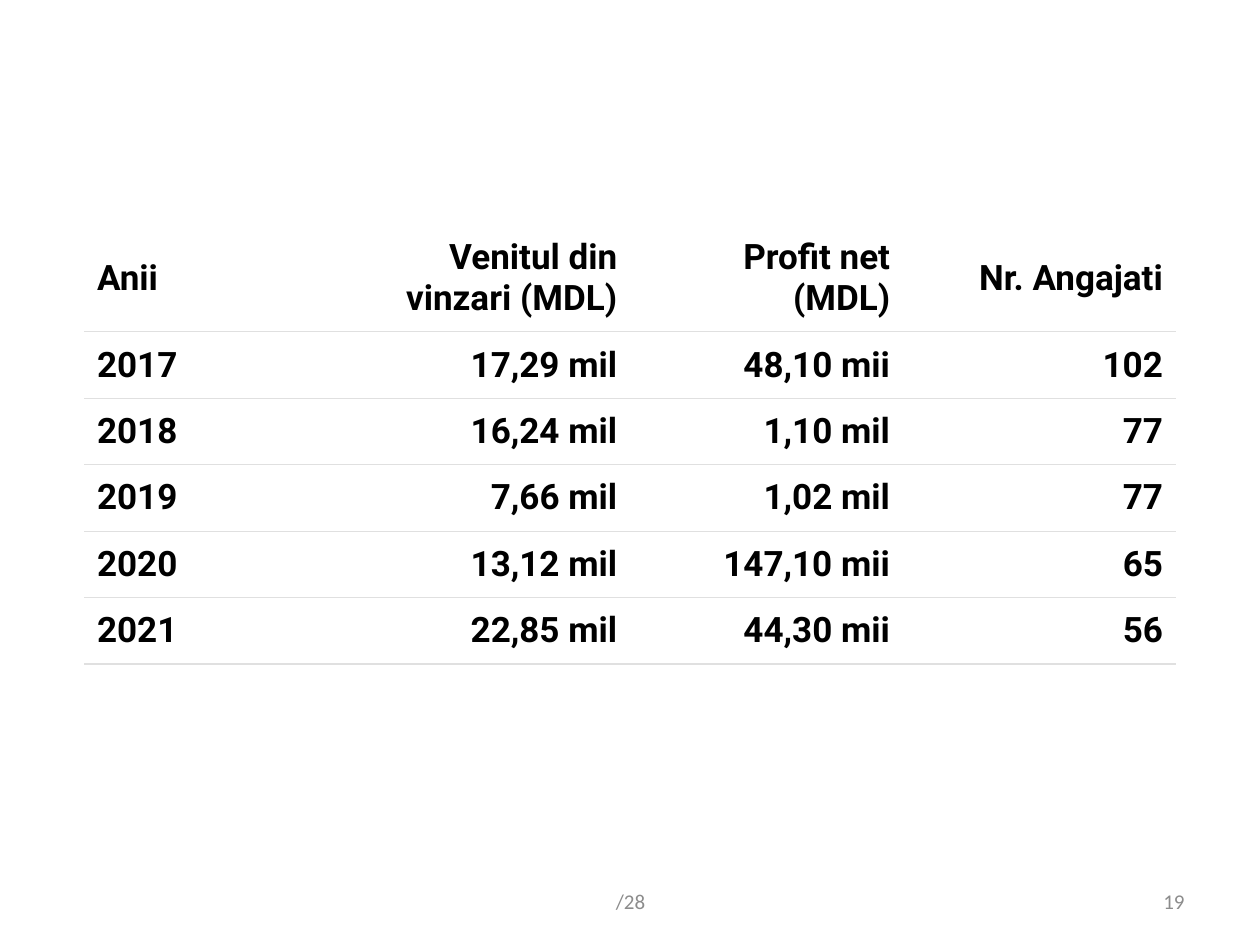
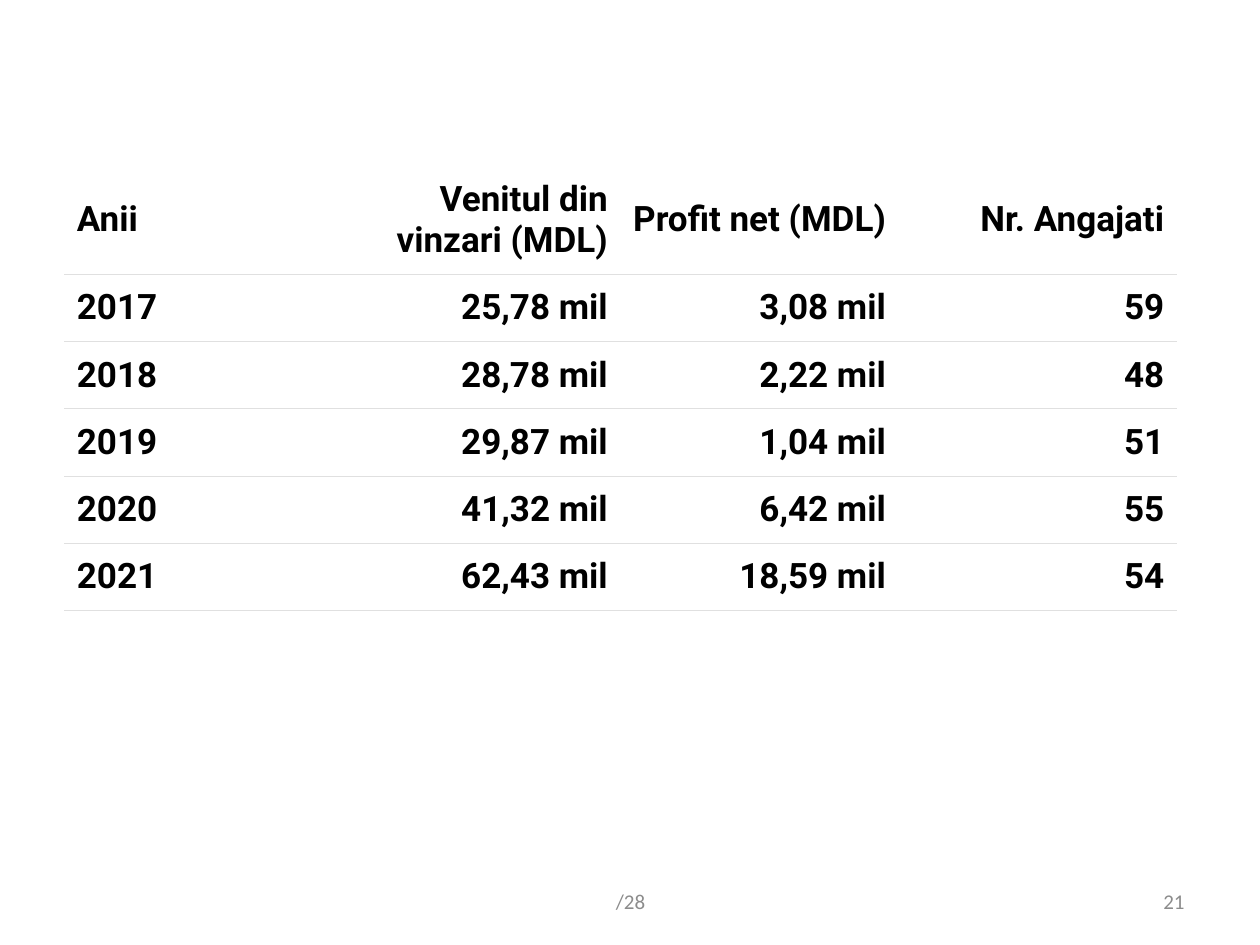
from dataclasses import dataclass

from lxml.etree import fromstring
from pptx import Presentation
from pptx.dml.color import RGBColor as Rgb
from pptx.enum.text import MSO_ANCHOR as Anchor, PP_ALIGN as Align
from pptx.util import Inches, Pt

NS = "http://schemas.openxmlformats.org/drawingml/2006/main"
WIDE, HIGH = 10, 7.5


@dataclass(frozen=True)
class Theme:
    ink: str = "000000"
    paper: str = "FFFFFF"
    rule: str = "E0E0E0"
    mute: str = "8C8C8C"
    body: str = "Roboto"
    foot: str = "Calibri"
    big: int = 20
    small: int = 12
    line: float = 0.75
    pad: float = 0.1


LOOK = Theme()

# Table content
HEAD = ("Anii", "Venitul din vinzari (MDL)", "Profit net (MDL)", "Nr. Angajati")
YEARS = range(2017, 2022)
FIRST = (
    ("17,29 mil", "48,10 mii", "102"),
    ("16,24 mil", "1,10 mil", "77"),
    ("7,66 mil", "1,02 mil", "77"),
    ("13,12 mil", "147,10 mii", "65"),
    ("22,85 mil", "44,30 mii", "56"),
)
NEXT = (
    ("25,78 mil", "3,08 mil", "59"),
    ("28,78 mil", "2,22 mil", "48"),
    ("29,87 mil", "1,04 mil", "51"),
    ("41,32 mil", "6,42 mil", "55"),
    ("62,43 mil", "18,59 mil", "54"),
)
# Page number, table box (left, top, width) and figures
PAGES = (
    (19, (0.67, 1.78, 8.66), FIRST),
    (21, (0.51, 1.31, 8.83), NEXT),
)
HEAD_H, ROW_H = 0.85, 0.52


def write(frame, text, align, font, size, color, bold=False):
    par = frame.paragraphs[0]
    par.alignment = align
    run = par.add_run()
    run.text = text
    run.font.name, run.font.size, run.font.bold = font, Pt(size), bold
    run.font.color.rgb = Rgb.from_string(color)


def edge(cell, side, color=None):
    """Set one cell border; no colour means no line."""
    fill = (f'<a:solidFill><a:srgbClr val="{color}"/></a:solidFill>'
            if color else "<a:noFill/>")
    return fromstring(f'<a:ln{side} xmlns:a="{NS}" w="{Pt(LOOK.line)}">'
                      f'{fill}</a:ln{side}>')


def fill_cell(cell, text, row, col):
    cell.fill.solid()
    cell.fill.fore_color.rgb = Rgb.from_string(LOOK.paper)
    cell.vertical_anchor = Anchor.MIDDLE
    cell.margin_left = cell.margin_right = Inches(LOOK.pad)
    cell.margin_top = cell.margin_bottom = Inches(LOOK.pad)
    write(cell.text_frame, text, Align.RIGHT if col else Align.LEFT,
          LOOK.body, LOOK.big, LOOK.ink, True)
    # Thin rules between rows, none between columns
    sides = {"L": None, "R": None, "T": LOOK.rule if row else None, "B": LOOK.rule}
    props = cell._tc.get_or_add_tcPr()
    for spot, (side, color) in enumerate(sides.items()):
        props.insert(spot, edge(cell, side, color))


def add_grid(slide, box, data):
    left, top, width = box
    rows = [HEAD] + [(str(year), *vals) for year, vals in zip(YEARS, data)]
    high = HEAD_H + ROW_H * len(data)
    grid = slide.shapes.add_table(len(rows), len(HEAD), Inches(left), Inches(top),
                                  Inches(width), Inches(high)).table
    grid.first_row = grid.horz_banding = False
    for row, vals in enumerate(rows):
        grid.rows[row].height = Inches(ROW_H if row else HEAD_H)
        for col, text in enumerate(vals):
            fill_cell(grid.cell(row, col), text, row, col)


def add_foot(slide, page):
    # Left and width as shares of the slide's width
    parts = (("/28", 0.342, 0.317, Align.CENTER),
             (str(page), 0.717, 0.233, Align.RIGHT))
    for text, left, width, align in parts:
        box = slide.shapes.add_textbox(Inches(left * WIDE), Inches(6.95),
                                       Inches(width * WIDE), Inches(0.4))
        frame = box.text_frame
        frame.word_wrap = True
        frame.vertical_anchor = Anchor.MIDDLE
        write(frame, text, align, LOOK.foot, LOOK.small, LOOK.mute)


def main():
    deck = Presentation()
    deck.slide_width, deck.slide_height = Inches(WIDE), Inches(HIGH)
    blank = deck.slide_layouts[6]
    for page, box, data in PAGES:
        slide = deck.slides.add_slide(blank)
        add_grid(slide, box, data)
        add_foot(slide, page)
    deck.save("out.pptx")


if __name__ == "__main__":
    main()
